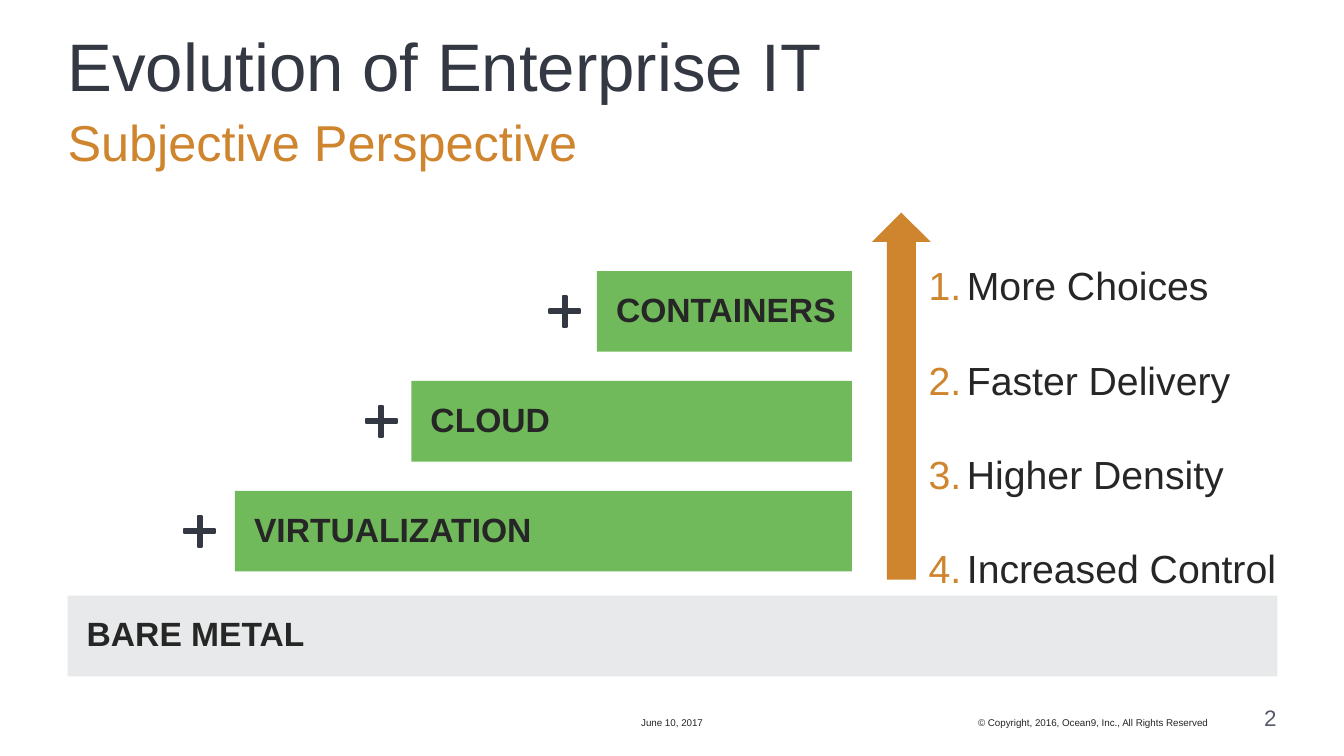
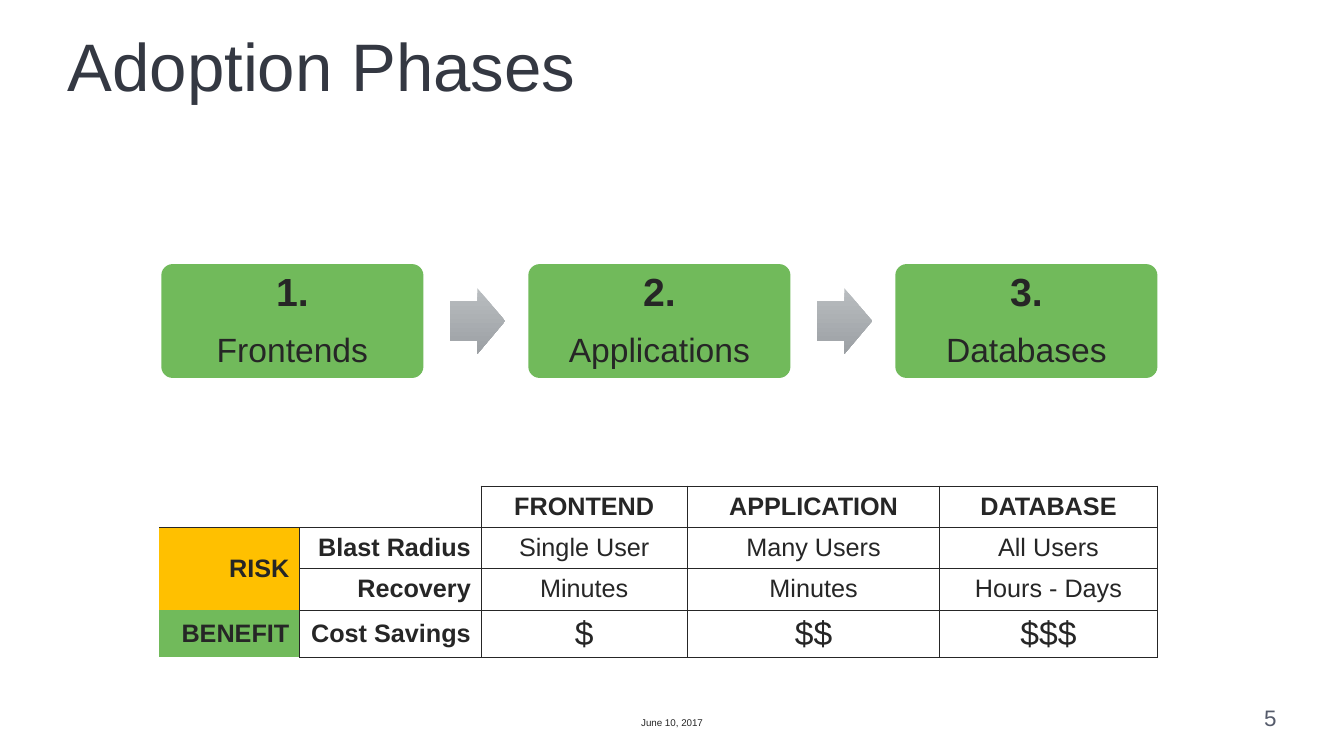
from lxml import etree
from pptx import Presentation
from pptx.dml.color import RGBColor
from pptx.enum import shapes, text
from pptx.oxml import ns
from pptx.util import Inches, Pt

FONT = "Arial"
INK, SLATE, GRAY = "262626", "343842", "555B6B"
ORANGE, GREEN, AMBER, PALE, WHITE = "CF842E", "71BA5B", "FFC000", "E8E9EA", "FFFFFF"
ARROW_TOP, ARROW_BOTTOM = "B9BDC0", "9CA0A4"
LEFT, CENTER, RIGHT = text.PP_ALIGN.LEFT, text.PP_ALIGN.CENTER, text.PP_ALIGN.RIGHT
TOP, MIDDLE, BOTTOM = text.MSO_ANCHOR.TOP, text.MSO_ANCHOR.MIDDLE, text.MSO_ANCHOR.BOTTOM
SHAPE = shapes.MSO_SHAPE

MARGIN, CONTENT_WIDTH = 0.67, 12
DATE = "June 10, 2017"
COPYRIGHT = "© Copyright, 2016, Ocean9, Inc., All Rights Reserved"

# Label, left edge of the bar, left edge of its plus sign; from top to bottom
LAYERS = [
    ("CONTAINERS", 5.92, 5.39),
    ("CLOUD", 4.08, 3.57),
    ("VIRTUALIZATION", 2.33, 1.77),
]
BENEFITS = ["More Choices", "Faster Delivery", "Higher Density", "Increased Control"]

PHASES = ["Frontends", "Applications", "Databases"]
COLUMN_WIDTHS = [1.39, 1.8, 2.05, 2.5, 2.16]
ROW_HEIGHTS = [0.41, 0.41, 0.41, 0.47]
COMPARISON = [
    ["", "", "FRONTEND", "APPLICATION", "DATABASE"],
    ["RISK", "Blast Radius", "Single User", "Many Users", "All Users"],
    ["", "Recovery", "Minutes", "Minutes", "Hours - Days"],
    ["BENEFIT", "Cost Savings", "$", "$$", "$$$"],
]
CELL_FILLS = {(1, 0): AMBER, (2, 0): AMBER, (3, 0): GREEN}
# Cell edges without a visible line
OPEN_EDGES = {(0, 0): "LRT", (0, 1): "LT", (1, 0): "LB", (2, 0): "LTB", (3, 0): "LTB"}


def rgb(value):
    return RGBColor.from_string(value)


def box(left, top, width, height):
    return [Inches(value) for value in (left, top, width, height)]


def number_paragraph(paragraph, color, indent):
    properties = paragraph._p.get_or_add_pPr()
    properties.set("marL", str(Inches(indent)))
    properties.set("indent", str(-Inches(indent)))
    bullet_color = etree.SubElement(properties, ns.qn("a:buClr"))
    etree.SubElement(bullet_color, ns.qn("a:srgbClr"), val=color)
    etree.SubElement(properties, ns.qn("a:buFont"), typeface=FONT)
    etree.SubElement(properties, ns.qn("a:buAutoNum"), type="arabicPeriod")


def write(frame, content, size=24, color=INK, bold=False, align=LEFT,
          spacing=1.0, after=0, number_color=None):
    """Put content in the empty first paragraph, or in a new one after it."""
    paragraph = frame.paragraphs[0]
    if paragraph.runs:
        paragraph = frame.add_paragraph()
    if number_color:
        number_paragraph(paragraph, number_color, 0.38)
    paragraph.alignment = align
    paragraph.line_spacing = spacing
    paragraph.space_before, paragraph.space_after = Pt(0), Pt(after)
    run = paragraph.add_run()
    run.text = content
    font = run.font
    font.name, font.size, font.bold = FONT, Pt(size), bold
    font.color.rgb = rgb(color)


def prepare(frame, anchor=TOP, inset=0):
    frame.word_wrap = True
    frame.auto_size = text.MSO_AUTO_SIZE.NONE
    frame.vertical_anchor = anchor
    frame.margin_left = frame.margin_right = Inches(inset)
    frame.margin_top = frame.margin_bottom = Inches(inset)
    return frame


def add_text(slide, place, content, anchor=TOP, **style):
    frame = prepare(slide.shapes.add_textbox(*box(*place)).text_frame, anchor)
    for line in content if isinstance(content, list) else [content]:
        write(frame, line, **style)


def add_shape(slide, kind, place, fill=None, adjustments=()):
    shape = slide.shapes.add_shape(kind, *box(*place))
    shape.shadow.inherit = False
    shape.line.fill.background()
    if fill:
        shape.fill.solid()
        shape.fill.fore_color.rgb = rgb(fill)
    for index, value in enumerate(adjustments):
        shape.adjustments[index] = value
    return shape


def add_slide(presentation, title, number):
    """Add a title-only slide with the shared title style and footer."""
    slide = presentation.slides.add_slide(presentation.slide_layouts[5])
    heading = slide.shapes.title
    heading.left, heading.top, heading.width, heading.height = box(
        MARGIN, 0.33, CONTENT_WIDTH, 0.75)
    write(prepare(heading.text_frame), title, size=48, color=SLATE, spacing=0.9)
    add_text(slide, (6.12, 7, 1.09, 0.23), DATE, anchor=BOTTOM, size=7, align=CENTER)
    add_text(slide, (12.08, 7, 0.58, 0.25), str(number), anchor=BOTTOM,
             size=16, color=GRAY, align=RIGHT)
    return slide


def add_bar(slide, label, left, top, right, fill):
    bar = add_shape(slide, SHAPE.RECTANGLE, (left, top, right - left, 0.8), fill)
    frame = prepare(bar.text_frame, MIDDLE, 0.05)
    frame.margin_left = Inches(0.19)
    write(frame, label, bold=True, spacing=0.9)


def build_evolution(presentation):
    slide = add_slide(presentation, "Evolution of Enterprise IT", 2)
    add_text(slide, (MARGIN, 1.17, CONTENT_WIDTH, 0.58), "Subjective Perspective",
             size=36, color=ORANGE, spacing=0.9)
    add_text(slide, (7.58, 7, 4.4, 0.23), COPYRIGHT, anchor=BOTTOM, size=7, align=RIGHT)

    add_bar(slide, "BARE METAL", MARGIN, 5.91, MARGIN + CONTENT_WIDTH, PALE)
    for index, (label, left, plus_left) in enumerate(LAYERS):
        top = 2.69 + index * 1.09
        add_bar(slide, label, left, top, 8.45, GREEN)
        plus = add_shape(slide, SHAPE.MATH_PLUS, (plus_left, top + 0.19, 0.42, 0.42),
                         SLATE, [0.09])
        plus.line.color.rgb = rgb(SLATE)
        plus.line.width = Pt(1.5)

    add_shape(slide, SHAPE.UP_ARROW, (8.65, 2.11, 0.58, 3.64), ORANGE)
    add_text(slide, (9.21, 2.13, 3.62, 3.79), BENEFITS, size=28, spacing=2.0,
             number_color=ORANGE)


def add_phases(slide):
    step = 3.64
    for index, phase in enumerate(PHASES):
        left = 1.6 + index * step
        card = add_shape(slide, SHAPE.ROUNDED_RECTANGLE, (left, 2.62, 2.6, 1.13),
                         GREEN, [0.1])
        frame = prepare(card.text_frame, MIDDLE, 0.05)
        write(frame, f"{index + 1}.", size=28, bold=True, align=CENTER,
              spacing=0.9, after=13)
        write(frame, phase, align=CENTER, spacing=0.9)
        if index < len(PHASES) - 1:
            arrow = add_shape(slide, SHAPE.RIGHT_ARROW, (left + 2.86, 2.86, 0.55, 0.65),
                              adjustments=[0.6, 0.5])
            arrow.fill.gradient()
            arrow.fill.gradient_angle = 270
            for stop, color in zip(arrow.fill.gradient_stops, (ARROW_TOP, ARROW_BOTTOM)):
                stop.color.rgb = rgb(color)


def set_borders(cell, open_edges):
    properties = cell._tc.get_or_add_tcPr()
    for index, edge in enumerate("LRTB"):
        line = etree.Element(ns.qn(f"a:ln{edge}"), w=str(Pt(0.25)))
        if edge in open_edges:
            etree.SubElement(line, ns.qn("a:noFill"))
        else:
            fill = etree.SubElement(line, ns.qn("a:solidFill"))
            etree.SubElement(fill, ns.qn("a:srgbClr"), val=INK)
        properties.insert(index, line)


def add_comparison(slide):
    place = box(1.58, 4.82, sum(COLUMN_WIDTHS), sum(ROW_HEIGHTS))
    table = slide.shapes.add_table(len(ROW_HEIGHTS), len(COLUMN_WIDTHS), *place).table
    table.first_row = table.horz_banding = False
    for column, width in zip(table.columns, COLUMN_WIDTHS):
        column.width = Inches(width)
    for row, height in zip(table.rows, ROW_HEIGHTS):
        row.height = Inches(height)

    for r, values in enumerate(COMPARISON):
        for c, value in enumerate(values):
            cell = table.cell(r, c)
            cell.vertical_anchor = MIDDLE
            fill = CELL_FILLS.get((r, c), WHITE)
            cell.fill.solid()
            cell.fill.fore_color.rgb = rgb(fill)
            set_borders(cell, OPEN_EDGES.get((r, c), ""))
            if value:
                write(cell.text_frame, value, size=24 if value.startswith("$") else 18,
                      bold=r == 0 or c < 2, align=RIGHT if c < 2 else CENTER)
            else:
                cell.text_frame.paragraphs[0].font.size = Pt(18)
    table.cell(1, 0).merge(table.cell(2, 0))


def build_phases(presentation):
    slide = add_slide(presentation, "Adoption Phases", 5)
    add_phases(slide)
    add_comparison(slide)


def main():
    presentation = Presentation()
    presentation.slide_width, presentation.slide_height = Inches(13.33), Inches(7.5)
    build_evolution(presentation)
    build_phases(presentation)
    presentation.save("out.pptx")


if __name__ == "__main__":
    main()
